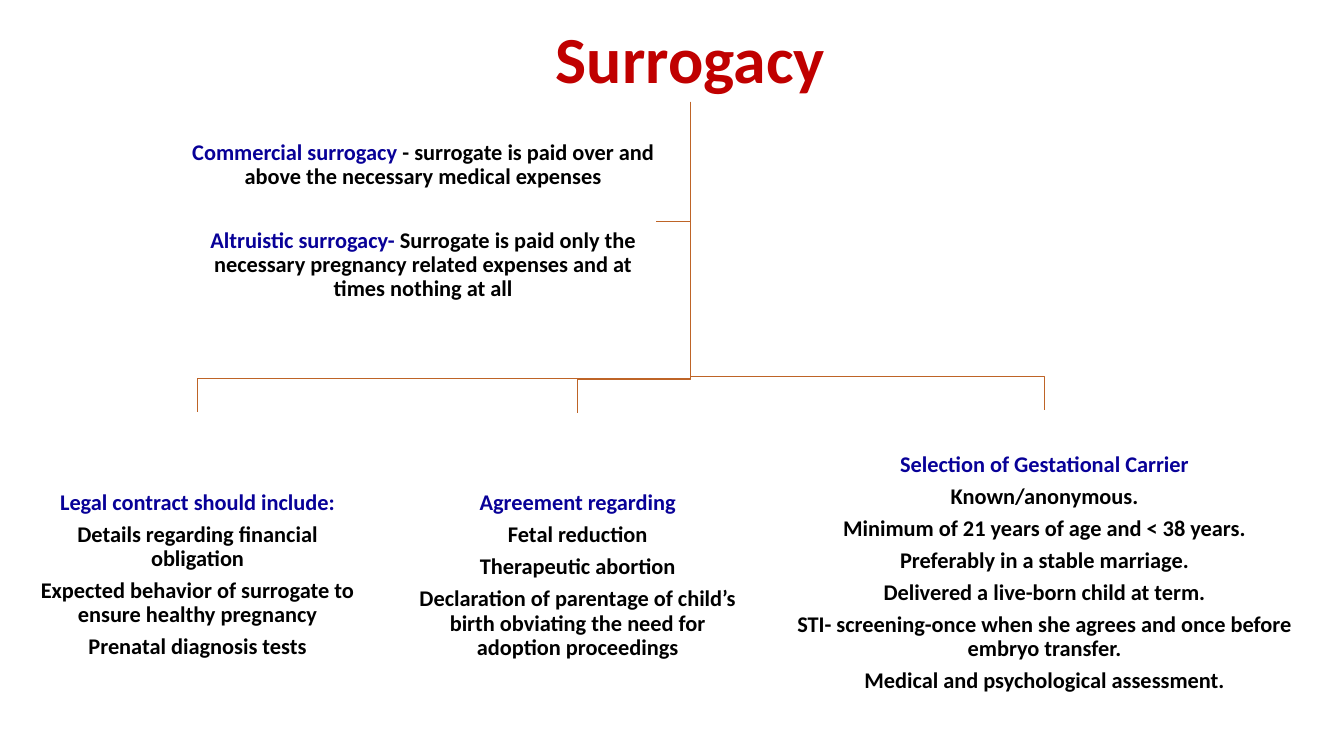
"""Build a slide that maps the kinds and terms of surrogacy as a tree."""
import pptx
import pptx.dml.color
import pptx.enum.shapes
import pptx.enum.text
import pptx.util

Cm = pptx.util.Cm
Pt = pptx.util.Pt
BLUE, BLACK, RED, WHITE, BROWN = "080198", "000000", "C00000", "FFFFFF", "BE6427"


def paint(color, code):
    color.rgb = pptx.dml.color.RGBColor.from_string(code)


def write(frame, lines, size, inset, gap):
    frame.word_wrap = True
    frame.vertical_anchor = pptx.enum.text.MSO_ANCHOR.MIDDLE
    frame.margin_left = frame.margin_right = Cm(inset)
    frame.margin_top = frame.margin_bottom = Cm(inset)
    for i, line in enumerate(lines):
        para = frame.paragraphs[0] if i == 0 else frame.add_paragraph()
        para.alignment = pptx.enum.text.PP_ALIGN.CENTER
        para.line_spacing = 0.9
        para.space_after = Pt(gap)
        para.font.name = "Calibri"
        para.font.size = Pt(size)
        para.font.bold = True
        for text, code in line:
            run = para.add_run()
            run.text = text
            paint(run.font.color, code)


deck = pptx.Presentation()
deck.slide_width = Cm(33.87)
deck.slide_height = Cm(19.05)
slide = deck.slides.add_slide(deck.slide_layouts[6])
shapes = slide.shapes

trunk, start = 17.4, 2.57
kinds = (4.8, 3.25, 11.73, 4.65)
kind_lines = [
    [("Commercial surrogacy ", BLUE),
     ("- surrogate is paid over and above the necessary medical expenses", BLACK)],
    [("Altruistic surrogacy- ", BLUE),
     ("Surrogate is paid only the necessary pregnancy related expenses "
      "and at times nothing at all", BLACK)],
]
topics = [
    ((0.94, 10.39, 8.08, 8.2), "Legal contract should include:", [
        "Details regarding financial obligation",
        "Expected behavior of surrogate to ensure healthy pregnancy",
        "Prenatal diagnosis tests"]),
    ((10.19, 10.41, 8.74, 8.2), "Agreement regarding", [
        "Fetal reduction",
        "Therapeutic abortion",
        "Declaration of parentage of child’s birth obviating the need "
        "for adoption proceedings"]),
    ((19.96, 10.34, 12.73, 8.2), "Selection of Gestational Carrier", [
        "Known/anonymous.",
        "Minimum of 21 years of age and < 38 years.",
        "Preferably in a stable marriage.",
        "Delivered a live-born child at term.",
        "STI- screening-once when she agrees and once before embryo transfer.",
        "Medical and psychological assessment."]),
]

left, top, width, height = kinds
side = top + height / 2
routes = [[(trunk, side), (left + width, side)]]
boxes = [(kinds, kind_lines, 28.5)]
for place, head, items in topics:
    left, top, width, height = place
    mid, bend = left + width / 2, top - 0.85
    routes.append([(trunk, bend), (mid, bend), (mid, top)])
    lines = [[(head, BLUE)]] + [[(item, BLACK)] for item in items]
    boxes.append((place, lines, 5.6))

for route in routes:
    pen = shapes.build_freeform(Cm(trunk), Cm(start))
    pen.add_line_segments([(Cm(x), Cm(y)) for x, y in route], close=False)
    branch = pen.convert_to_shape()
    branch.shadow.inherit = False
    branch.fill.background()
    paint(branch.line.color, BROWN)
    branch.line.width = Pt(1)

title = shapes.add_textbox(Cm(13.36), Cm(0.56), Cm(8.08), Cm(2.01))
write(title.text_frame, [[("Surrogacy", RED)]], 47, 0.08, 16.45)

for place, lines, gap in boxes:
    box = shapes.add_shape(pptx.enum.shapes.MSO_SHAPE.RECTANGLE, *map(Cm, place))
    box.shadow.inherit = False
    box.fill.solid()
    paint(box.fill.fore_color, WHITE)
    box.line.fill.background()
    write(box.text_frame, lines, 16, 0.03, gap)

box.text_frame.paragraphs[-1].space_after = Pt(5.6)
deck.save("out.pptx")
